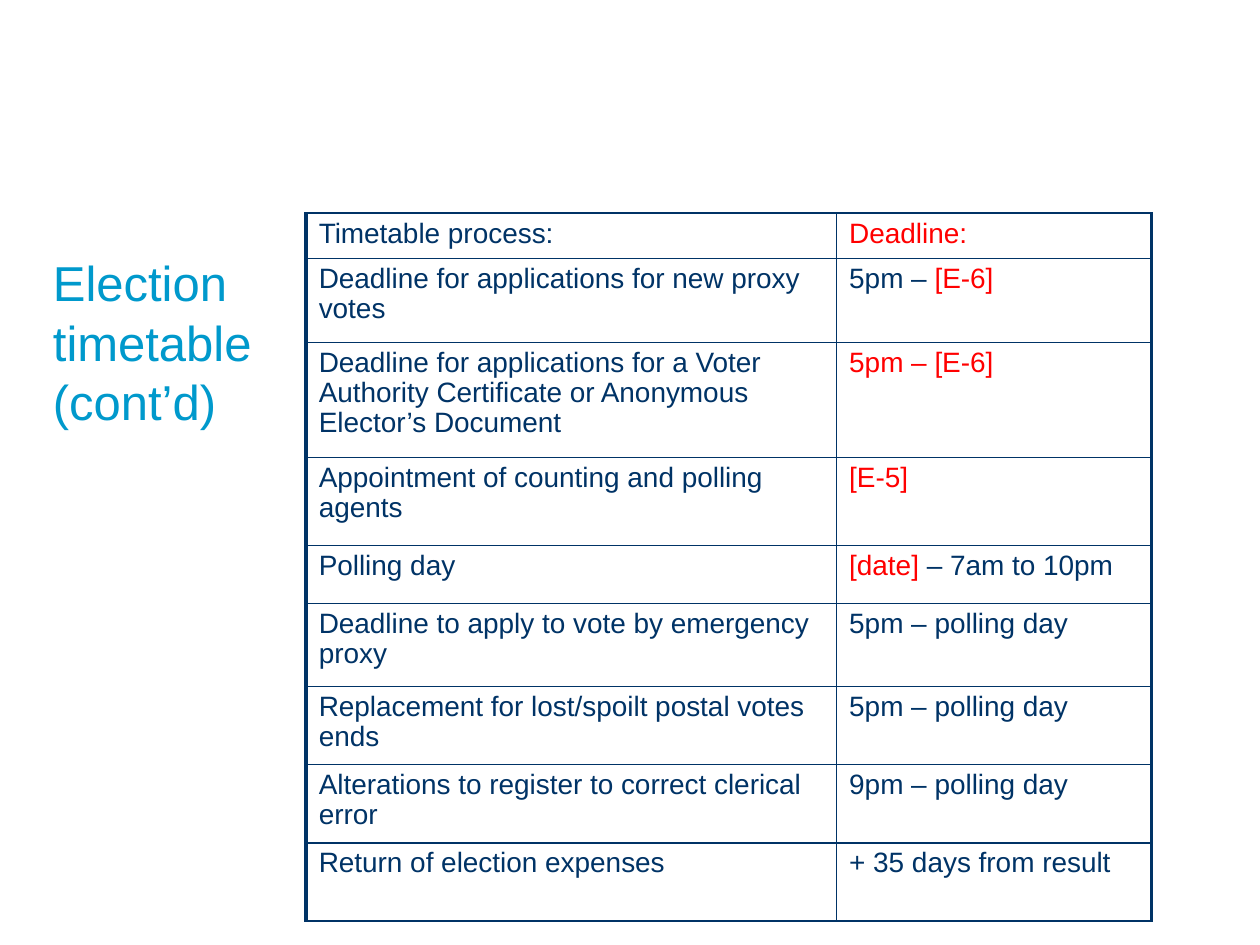
from lxml import etree
from pptx import Presentation
from pptx.dml.color import RGBColor
from pptx.enum import text
from pptx.oxml.ns import qn
from pptx.util import Inches, Pt

NAVY, RED, BLUE = "003366", "FF0000", "0099CC"
TITLE = "Election timetable (cont’d)"
ROWS = [
    (0.36, "Timetable process:", [("Deadline:", RED)]),
    (0.67, "Deadline for applications for new proxy votes",
     [("5pm – ", NAVY), ("[E-6]", RED)]),
    (0.91, "Deadline for applications for a Voter Authority Certificate "
     "or Anonymous Elector’s Document", [("5pm – [E-6]", RED)]),
    (0.7, "Appointment of counting and polling agents", [("[E-5]", RED)]),
    (0.46, "Polling day", [("[date]", RED), (" – 7am to 10pm", NAVY)]),
    (0.66, "Deadline to apply to vote by emergency proxy",
     [("5pm – polling day", NAVY)]),
    (0.62, "Replacement for lost/spoilt postal votes ends",
     [("5pm – polling day", NAVY)]),
    (0.62, "Alterations to register to correct clerical error",
     [("9pm – polling day", NAVY)]),
    (0.62, "Return of election expenses", [("+ 35 days from result", NAVY)]),
]
COLS = [4.21, 2.5]


def rgb(value):
    return RGBColor.from_string(value)


def set_borders(cell, widths):
    tc_pr = cell._tc.get_or_add_tcPr()
    for i, (side, width) in enumerate(widths.items()):
        ln = etree.Element(qn("a:" + side), w=str(Pt(width)))
        fill = etree.SubElement(ln, qn("a:solidFill"))
        etree.SubElement(fill, qn("a:srgbClr"), val=NAVY)
        tc_pr.insert(i, ln)


def fill_cell(cell, runs, widths):
    cell.fill.background()
    p = cell.text_frame.paragraphs[0]
    p.line_spacing = 0.96
    p.font.name, p.font.size = "Arial", Pt(16)
    for words, color in runs:
        r = p.add_run()
        r.text = words
        r.font.color.rgb = rgb(color)
    set_borders(cell, widths)


def add_title(slide):
    sp = slide.shapes.title
    sp.left, sp.top, sp.width, sp.height = map(Inches, (0.42, 2, 2.75, 4.67))
    tf = sp.text_frame
    tf.text = TITLE
    tf.word_wrap = True
    tf.auto_size = text.MSO_AUTO_SIZE.NONE
    tf.vertical_anchor = text.MSO_ANCHOR.TOP
    tf.margin_left = tf.margin_top = tf.margin_right = tf.margin_bottom = 0
    p = tf.paragraphs[0]
    p.alignment = text.PP_ALIGN.LEFT
    p.line_spacing = Pt(34)
    p.font.name, p.font.size = "Arial", Pt(28)
    p.font.color.rgb = rgb(BLUE)


def add_timetable(slide):
    height = sum(row[0] for row in ROWS)
    table = slide.shapes.add_table(
        len(ROWS), len(COLS), Inches(2.43), Inches(1.69),
        Inches(sum(COLS)), Inches(height)).table
    table.first_row = table.horz_banding = False
    for col, width in zip(table.columns, COLS):
        col.width = Inches(width)
    for i, (row_height, process, deadline) in enumerate(ROWS):
        table.rows[i].height = Inches(row_height)
        for j, runs in enumerate(([(process, NAVY)], deadline)):
            widths = {"lnL": 1 if j else 2.25, "lnR": 2.25 if j else 1,
                      "lnT": 1, "lnB": 1}
            fill_cell(table.cell(i, j), runs, widths)


prs = Presentation()
prs.slide_width, prs.slide_height = Inches(10), Inches(7.5)
slide = prs.slides.add_slide(prs.slide_layouts[5])
add_title(slide)
add_timetable(slide)
prs.save("out.pptx")
